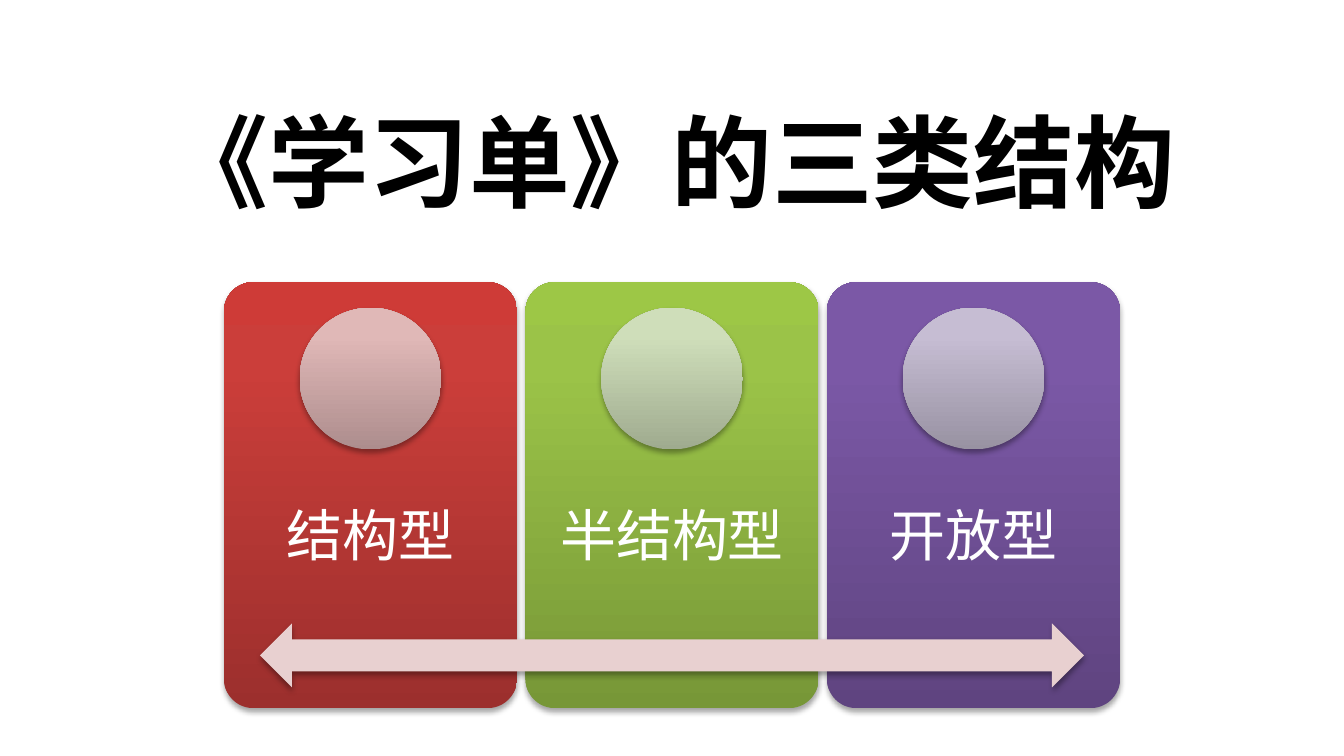
"""Build the slide on the three structure types of study sheets."""
from lxml import etree
from pptx import Presentation
from pptx.dml.color import RGBColor
from pptx.enum.shapes import MSO_SHAPE
from pptx.enum.text import MSO_ANCHOR, MSO_AUTO_SIZE, PP_ALIGN
from pptx.oxml.ns import qn
from pptx.util import Pt

ROUNDED = MSO_SHAPE.ROUNDED_RECTANGLE
OVAL = MSO_SHAPE.OVAL
DOUBLE_ARROW = MSO_SHAPE.LEFT_RIGHT_ARROW
CENTER = PP_ALIGN.CENTER
MIDDLE = MSO_ANCHOR.MIDDLE
FIT_SHAPE = MSO_AUTO_SIZE.SHAPE_TO_FIT_TEXT

BLACK = RGBColor(0x00, 0x00, 0x00)
WHITE = RGBColor(0xFF, 0xFF, 0xFF)
PALE_PINK = RGBColor(0xE8, 0xD0, 0xD0)

TITLE = "《学习单》的三类结构"
TYPES = [
    ("结构型", ("9C2F2D", "CB3E3A", "CE3B37"), ("AD8D8D", "E0B8B7", "E2B8B7")),
    ("半结构型", ("779737", "9BC348", "9DC746"), ("9FAB8F", "CFDEBA", "D0DFBA")),
    ("开放型", ("5F4480", "7B58A6", "7C57A8"), ("9892A2", "C6BDD3", "C6BED4")),
]
STOPS = (0, 80, 100)

SLIDE_W, SLIDE_H = 720, 405
CARD_W, CARD_H, CARD_GAP, CARD_TOP = 157, 228.2, 4.5, 151.2
CARDS_LEFT = (SLIDE_W - 3 * CARD_W - 2 * CARD_GAP) / 2
CIRCLE, CIRCLE_TOP = 75.9, 164.9
LABEL_TOP, LABEL_H, LABEL_INSET = 242.6, 91.4, 16.6
ARROW_W, ARROW_H, ARROW_TOP = 441.4, 34.3, 334


def add_shadowed(slide, kind, left, top, width, height):
    shape = slide.shapes.add_shape(kind, Pt(left), Pt(top), Pt(width), Pt(height))
    shape.line.fill.background()
    shape.shadow.inherit = False
    effects = shape.element.spPr.find(qn("a:effectLst"))
    shadow = etree.SubElement(
        effects, qn("a:outerShdw"), blurRad=str(Pt(3.1)), dist=str(Pt(1.8)),
        dir="5400000", rotWithShape="0")
    color = etree.SubElement(shadow, qn("a:srgbClr"), val="000000")
    etree.SubElement(color, qn("a:alpha"), val="35000")
    return shape


def fill_upward(shape, colors):
    shape.fill.gradient()
    shape.fill.gradient_angle = 90
    stops = shape.element.spPr.find(".//" + qn("a:gsLst"))
    for old in list(stops):
        stops.remove(old)
    for position, color in zip(STOPS, colors):
        stop = etree.SubElement(stops, qn("a:gs"), pos=str(position * 1000))
        etree.SubElement(stop, qn("a:srgbClr"), val=color)


def add_text(slide, box, text, font, size, color, bold=False):
    frame = slide.shapes.add_textbox(*(Pt(length) for length in box)).text_frame
    frame.word_wrap = True
    paragraph = frame.paragraphs[0]
    paragraph.alignment = CENTER
    run = paragraph.add_run()
    run.text = text
    run.font.name = font
    run.font.size = Pt(size)
    run.font.bold = bold
    run.font.color.rgb = color
    etree.SubElement(run.font._element, qn("a:ea"), typeface="Noto Sans CJK SC")
    return frame


def main():
    deck = Presentation()
    deck.slide_width, deck.slide_height = Pt(SLIDE_W), Pt(SLIDE_H)
    slide = deck.slides.add_slide(deck.slide_layouts[6])

    title = add_text(slide, (76.3, 49.7, 566.6, 72.7), TITLE,
                     "Noto Sans CJK SC", 54, BLACK, True)
    title.auto_size = FIT_SHAPE

    for index, (name, card_colors, circle_colors) in enumerate(TYPES):
        left = CARDS_LEFT + index * (CARD_W + CARD_GAP)
        card = add_shadowed(slide, ROUNDED, left, CARD_TOP, CARD_W, CARD_H)
        card.adjustments[0] = 0.1
        fill_upward(card, card_colors)

        label = add_text(slide, (left, LABEL_TOP, CARD_W, LABEL_H), name,
                         "Calibri", 30, WHITE)
        label.vertical_anchor = MIDDLE
        label.margin_left = label.margin_right = Pt(LABEL_INSET)
        label.margin_top = label.margin_bottom = Pt(LABEL_INSET)
        label.paragraphs[0].line_spacing = 0.9

        circle = add_shadowed(slide, OVAL, left + (CARD_W - CIRCLE) / 2,
                              CIRCLE_TOP, CIRCLE, CIRCLE)
        fill_upward(circle, circle_colors)

    arrow = add_shadowed(slide, DOUBLE_ARROW, (SLIDE_W - ARROW_W) / 2,
                         ARROW_TOP, ARROW_W, ARROW_H)
    arrow.fill.solid()
    arrow.fill.fore_color.rgb = PALE_PINK

    deck.save("out.pptx")


if __name__ == "__main__":
    main()
